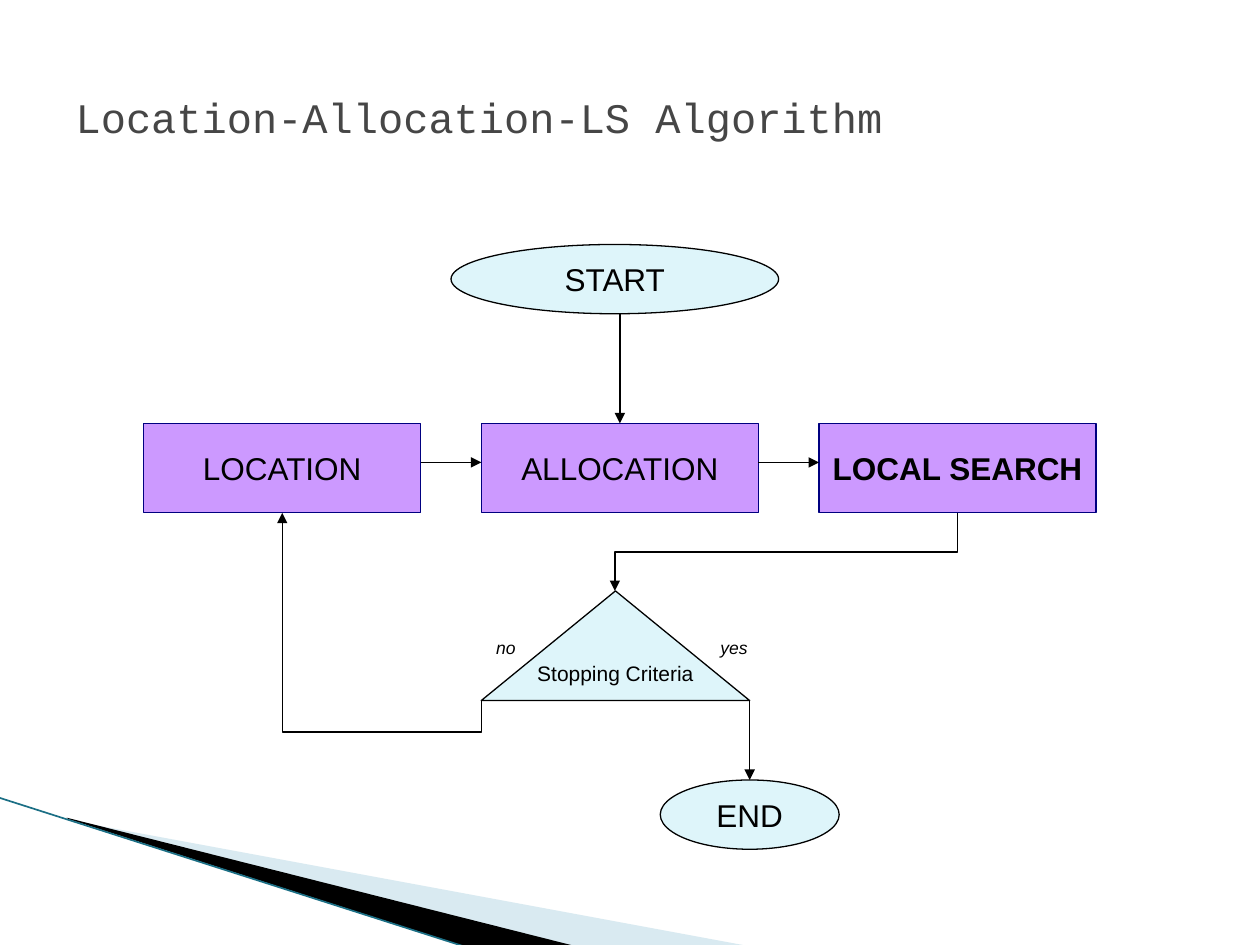
from pptx import Presentation
from pptx.dml.color import RGBColor
from pptx.enum.shapes import MSO_CONNECTOR, MSO_SHAPE
from pptx.enum.text import MSO_ANCHOR, PP_ALIGN
from pptx.oxml.ns import qn
from pptx.util import Inches, Pt
from lxml import etree

RECTANGLE, OVAL = MSO_SHAPE.RECTANGLE, MSO_SHAPE.OVAL
TRIANGLE = MSO_SHAPE.ISOSCELES_TRIANGLE
STRAIGHT, ELBOW = MSO_CONNECTOR.STRAIGHT, MSO_CONNECTOR.ELBOW
MIDDLE, TOP = MSO_ANCHOR.MIDDLE, MSO_ANCHOR.TOP
CENTER, LEFT = PP_ALIGN.CENTER, PP_ALIGN.LEFT

PURPLE, NAVY, PALE, BLACK = "CC99FF", "000080", "DEF5FA", "000000"


def color(value):
    return RGBColor.from_string(value)


class FlowSlide:
    font = "Arial"
    line_width = 0.75

    def __init__(self, deck):
        self.slide = deck.slides.add_slide(deck.slide_layouts[5])
        self.shapes = self.slide.shapes

    def set_text(self, shape, text, align=CENTER, anchor=MIDDLE, wrap=False,
                 ink=BLACK, **style):
        frame = shape.text_frame
        frame.text = text
        frame.word_wrap = wrap
        frame.vertical_anchor = anchor
        paragraph = frame.paragraphs[0]
        paragraph.alignment = align
        font = paragraph.runs[0].font
        for name, value in {"name": self.font, **style}.items():
            setattr(font, name, value)
        font.color.rgb = color(ink)

    def title(self, text, box, **style):
        title = self.shapes.title
        title.left, title.top, title.width, title.height = map(Inches, box)
        self.set_text(title, text, align=LEFT, wrap=True, **style)

    def node(self, kind, text, box, fill, outline, size=Pt(18), **style):
        node = self.shapes.add_shape(kind, *map(Inches, box))
        node.shadow.inherit = False
        node.fill.solid()
        node.fill.fore_color.rgb = color(fill)
        node.line.color.rgb = color(outline)
        node.line.width = Pt(self.line_width)
        self.set_text(node, text, size=size, **style)
        return node

    def label(self, text, box):
        label = self.shapes.add_textbox(*map(Inches, box))
        self.set_text(label, text, anchor=TOP, wrap=True, size=Pt(10), italic=True)

    def line(self, start, end, kind=STRAIGHT, ink=BLACK, width=line_width,
             arrow=True):
        line = self.shapes.add_connector(kind, *map(Inches, (*start, *end)))
        line.line.color.rgb = color(ink)
        line.line.width = Pt(width)
        properties = line._element.spPr
        if arrow:
            etree.SubElement(properties.find(qn("a:ln")), qn("a:tailEnd"), type="triangle")
        etree.SubElement(properties, qn("a:effectLst"))
        return line

    def elbow(self, start, end, turn_y):
        """Arrow that leaves and arrives vertically, crossing over at turn_y."""
        (x1, y1), (x2, y2) = start, end
        elbow = self.line(start, end, ELBOW)
        along, across = abs(y2 - y1), abs(x2 - x1)
        elbow.left = Inches((x1 + x2 - along) / 2)
        elbow.top = Inches((y1 + y2 - across) / 2)
        elbow.width, elbow.height = Inches(along), Inches(across)
        down = y2 > y1
        properties = elbow._element.spPr
        xfrm = properties.find(qn("a:xfrm"))
        for flip in ("flipH", "flipV"):
            xfrm.attrib.pop(flip, None)
        xfrm.set("rot", str((90 if down else 270) * 60000))
        if (x2 > x1) == down:
            xfrm.set("flipV", "1")
        geometry = properties.find(qn("a:prstGeom"))
        guides = geometry.get_or_add_avLst()
        bend = round((turn_y - y1) / (y2 - y1) * 100000)
        etree.SubElement(guides, qn("a:gd"), name="adj1", fmla=f"val {bend}")

    def wedge(self, points, fill, opacity=100):
        first, *rest = [(Inches(x), Inches(y)) for x, y in points]
        builder = self.shapes.build_freeform(*first)
        builder.add_line_segments(rest)
        wedge = builder.convert_to_shape()
        wedge.shadow.inherit = False
        wedge.fill.solid()
        wedge.fill.fore_color.rgb = color(fill)
        wedge.line.fill.background()
        if opacity < 100:
            tint = wedge._element.spPr.find(qn("a:solidFill"))[0]
            etree.SubElement(tint, qn("a:alpha"), val=str(opacity * 1000))


def main():
    deck = Presentation()
    deck.slide_width, deck.slide_height = Inches(10), Inches(7.5)
    flow = FlowSlide(deck)

    # Corner decoration
    flow.wedge([(0.55, 6.51), (5.95, 7.51), (4.56, 7.51), (0.55, 6.5)], "A0CBDC", 40)
    flow.wedge([(0.53, 6.49), (4.57, 7.51), (3.72, 7.52), (0.54, 6.5)], BLACK)
    flow.line((-0.01, 6.33), (3.71, 7.52), ink="1B6F85", width=0.95, arrow=False)

    flow.title("Location-Allocation-LS Algorithm", (0.5, 0.3, 9, 1.25),
               ink="464646", name="Courier New", size=Pt(24))

    # Row of steps
    step_left, step_top, step_width, step_height, pitch = 1.14, 3.36, 2.2, 0.71, 2.68
    step_bottom = step_top + step_height
    lefts = [step_left + i * pitch for i in range(3)]
    location_x, allocation_x, search_x = [left + step_width / 2 for left in lefts]
    steps = [
        flow.node(RECTANGLE, text, (left, step_top, step_width, step_height),
                  PURPLE, NAVY, bold=text == "LOCAL SEARCH")
        for text, left in zip(("LOCATION", "ALLOCATION", "LOCAL SEARCH"), lefts)
    ]
    for left, following in zip(lefts, lefts[1:]):
        flow.line((left + step_width, 3.67), (following, 3.67))

    # Start, decision and end
    flow.node(OVAL, "START", (3.58, 1.94, 2.6, 0.55), PALE, BLACK)
    flow.node(OVAL, "END", (5.24, 6.19, 1.42, 0.55), PALE, BLACK)
    flow.node(TRIANGLE, "Stopping Criteria", (3.82, 4.69, 2.13, 0.87),
              PALE, BLACK, size=Pt(12))

    # Arrows between the rows
    entry = flow.line((allocation_x, 2.49), (allocation_x, step_top))
    entry.end_connect(steps[1], 0)
    flow.elbow((search_x, step_bottom), (4.88, 4.69), 4.38)
    flow.elbow((3.82, 5.56), (location_x, step_bottom), 5.81)
    flow.line((5.95, 5.56), (5.95, 6.19))

    # Branch labels
    flow.label("yes", (5.55, 5.01, 0.55, 0.27))
    flow.label("no", (3.82, 5.01, 0.39, 0.27))

    deck.save("out.pptx")


if __name__ == "__main__":
    main()
